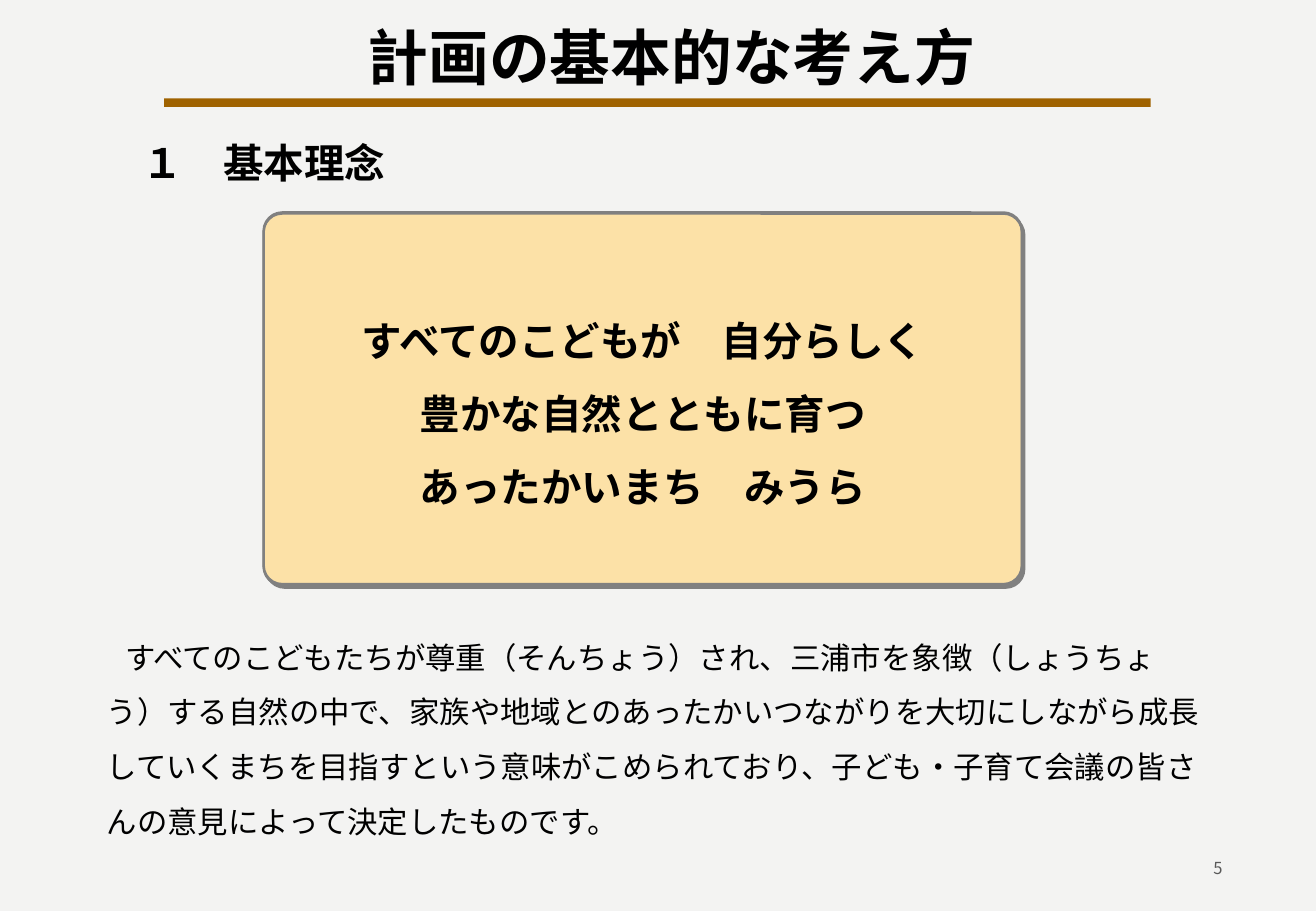
from lxml import etree
from pptx import Presentation
from pptx.dml.color import RGBColor
from pptx.enum.shapes import MSO_SHAPE
from pptx.enum.text import MSO_ANCHOR, PP_ALIGN
from pptx.oxml.ns import qn
from pptx.util import Inches, Pt

RECT, ROUNDED = MSO_SHAPE.RECTANGLE, MSO_SHAPE.ROUNDED_RECTANGLE
LEFT, CENTER, RIGHT = PP_ALIGN.LEFT, PP_ALIGN.CENTER, PP_ALIGN.RIGHT
TOP, MIDDLE = MSO_ANCHOR.TOP, MSO_ANCHOR.MIDDLE

TITLE = "計画の基本的な考え方"
HEADING = "１　基本理念"
PHILOSOPHY = [
    "すべてのこどもが　自分らしく",
    "豊かな自然とともに育つ",
    "あったかいまち　みうら",
]
EXPLANATION = (
    "すべてのこどもたちが尊重（そんちょう）され、三浦市を象徴（しょうちょう）する自然の中で、"
    "家族や地域とのあったかいつながりを大切にしながら成長していくまちを目指すという意味が"
    "こめられており、子ども・子育て会議の皆さんの意見によって決定したものです。"
)
PAGE_NUMBER = "5"

THEME = {
    "paper": "F3F3F2", "ink": "000000", "muted": "595959",
    "rule": "9F6200", "card": "FCE1A7", "edge": "808080",
    "sans": "Noto Sans CJK JP", "serif": "Cambria",
    "title": 36, "heading": 24, "body": 18, "page": 9.8,
    "tight": 1.3, "loose": 1.8,
}
CARD = (2.17, 1.75, 6.24, 3.06)


def color(name):
    return RGBColor.from_string(THEME[name])


def apply(target, values):
    for attribute, value in values.items():
        setattr(target, attribute, value)


def write(shape, lines, size, align=LEFT, face="sans", ink="ink", bold=False,
          leading="tight", anchor=TOP, wrap=True, margins=(0.1, 0.05, 0.1, 0.05), indent=None):
    frame = shape.text_frame
    apply(frame, {"word_wrap": wrap, "vertical_anchor": anchor})
    sides = ("margin_left", "margin_top", "margin_right", "margin_bottom")
    apply(frame, {side: Inches(gap) for side, gap in zip(sides, margins)})
    points = THEME[size]
    for index, line in enumerate(lines):
        paragraph = frame.add_paragraph() if index else frame.paragraphs[0]
        apply(paragraph, {"alignment": align, "line_spacing": Pt(round(points * THEME[leading], 1))})
        if indent:
            properties = paragraph._p.get_or_add_pPr()
            for key, length in zip(("marL", "indent"), indent):
                properties.set(key, str(Inches(length)))
        run = paragraph.add_run()
        run.text = line
        apply(run.font, {"size": Pt(points), "bold": bold, "name": THEME[face]})
        run.font.color.rgb = color(ink)
        east_asian = etree.SubElement(run._r.get_or_add_rPr(), qn("a:ea"))
        east_asian.set("typeface", THEME["sans"])


def add_text(slide, box, lines, size, **values):
    write(slide.shapes.add_textbox(*map(Inches, box)), lines, size, **values)


def add_panel(slide, kind, box, fill=None, line_width=None, corner=None):
    panel = slide.shapes.add_shape(kind, *map(Inches, box))
    panel.shadow.inherit = False
    if fill:
        panel.fill.solid()
        panel.fill.fore_color.rgb = color(fill)
    else:
        panel.fill.background()
    if line_width:
        panel.line.color.rgb = color("edge")
        panel.line.width = Pt(line_width)
    else:
        panel.line.fill.background()
    if corner:
        panel.adjustments[0] = corner
    return panel


def cast_shadow(panel, distance, degrees):
    effects = panel._element.spPr.find(qn("a:effectLst"))
    shadow = etree.SubElement(effects, qn("a:outerShdw"), dist=str(Pt(distance)),
                              dir=str(degrees * 60000), algn="ctr", rotWithShape="0")
    etree.SubElement(shadow, qn("a:srgbClr"), val=THEME["edge"])


def main():
    deck = Presentation()
    apply(deck, {"slide_width": Inches(10.83), "slide_height": Inches(7.5)})
    slide = deck.slides.add_slide(deck.slide_layouts[6])
    slide.background.fill.solid()
    slide.background.fill.fore_color.rgb = color("paper")

    add_text(slide, (7.65, 6.98, 2.51, 0.31), [PAGE_NUMBER], "page",
             align=RIGHT, ink="muted", anchor=MIDDLE)

    left, top, width, height = CARD
    backing = add_panel(slide, ROUNDED, (left, top + 0.01, width, height), "card", 1.25, 0.05)
    cast_shadow(backing, 2, 45)
    card = add_panel(slide, ROUNDED, CARD, line_width=1.5, corner=0.05)
    write(card, PHILOSOPHY, "heading", align=CENTER, face="serif", bold=True,
          leading="loose", anchor=MIDDLE, margins=(0.08, 0.05, 0.08, 0))

    add_text(slide, (1.06, 1.05, 2.22, 0.5), [HEADING], "heading",
             align=CENTER, bold=True, wrap=False)
    add_panel(slide, RECT, (1.35, 0.81, 8.12, 0.07), "rule")
    add_text(slide, (2.9, 0.06, 5.25, 0.71), [TITLE], "title",
             align=CENTER, bold=True, wrap=False)
    add_text(slide, (0.49, 5.06, 9.59, 1.84), [EXPLANATION], "body",
             leading="loose", indent=(0.29, 0.15))
    deck.save("out.pptx")


if __name__ == "__main__":
    main()
